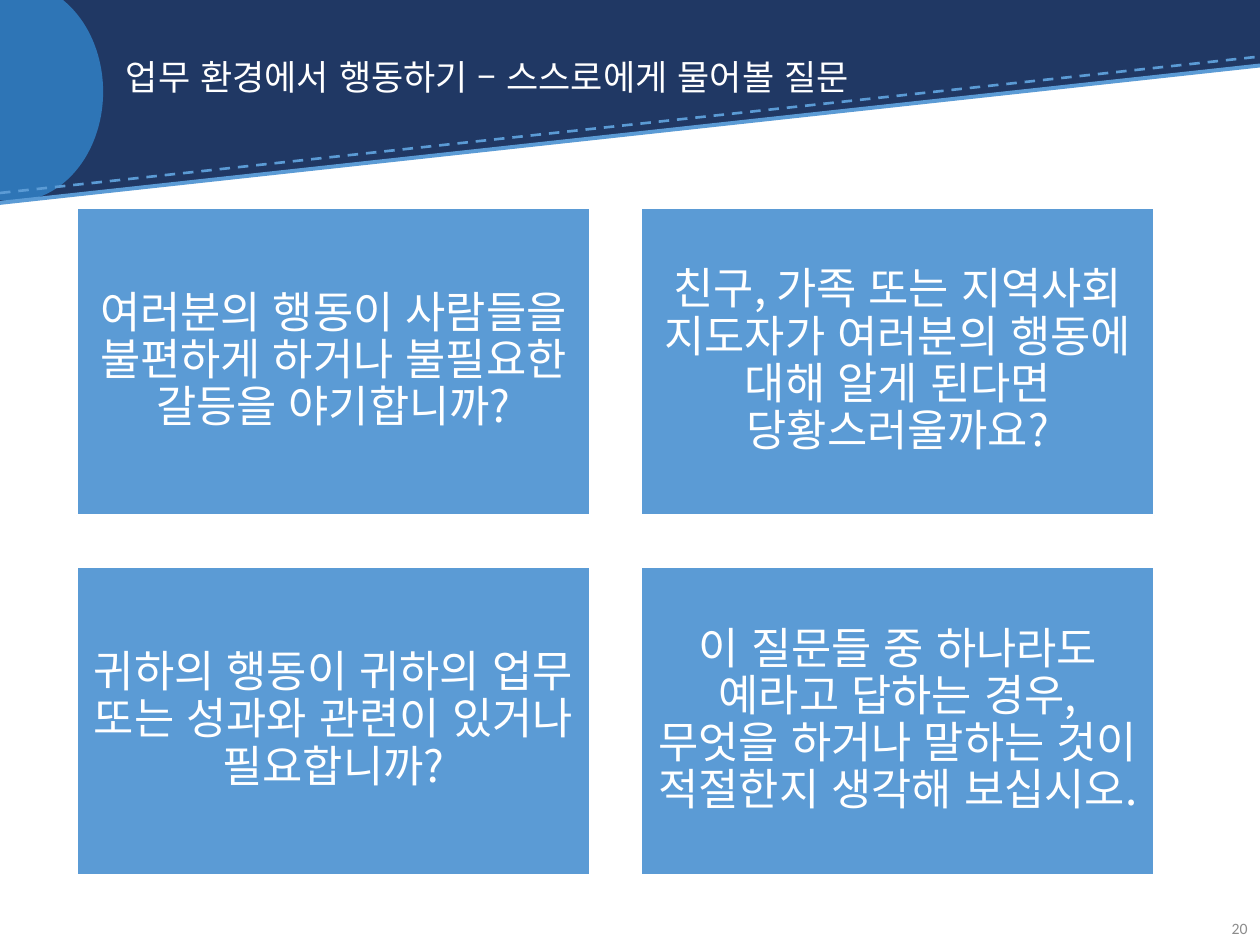
from lxml.etree import SubElement
from pptx import Presentation
from pptx.dml.color import RGBColor
from pptx.enum.dml import MSO_LINE
from pptx.enum.lang import MSO_LANGUAGE_ID
from pptx.enum.shapes import MSO_CONNECTOR, MSO_SHAPE
from pptx.enum.text import MSO_ANCHOR, PP_ALIGN
from pptx.oxml.ns import qn
from pptx.util import Cm, Pt

# Content
TITLE = "업무 환경에서 행동하기 – 스스로에게 물어볼 질문"
QUESTIONS = [
    "여러분의 행동이 사람들을 불편하게 하거나 불필요한 갈등을 야기합니까?",
    "친구, 가족 또는 지역사회 지도자가 여러분의 행동에 대해 알게 된다면 당황스러울까요?",
    "귀하의 행동이 귀하의 업무 또는 성과와 관련이 있거나 필요합니까?",
    "이 질문들 중 하나라도 예라고 답하는 경우, 무엇을 하거나 말하는 것이 적절한지 생각해 보십시오.",
]
PAGE_NUMBER = "20"

# Style
COLORS = {"navy": "203864", "blue": "2E75B6", "sky": "5B9BD5",
          "white": "FFFFFF", "gray": "8C8C8C"}
KOREAN, LATIN = "Noto Sans CJK KR", "Calibri"

# Layout in centimetres
WIDTH, HEIGHT = 25.4, 19.05
BAND_HEIGHT = 1.31
CARD_LEFT, CARD_TOP = 1.55, 4.19
CARD_WIDTH, CARD_HEIGHT, CARD_GAP = 10.34, 6.2, 1.04
COLUMNS = 2


def color(name):
    return RGBColor.from_string(COLORS[name])


def add_block(page, kind, place, fill, outline=None):
    block = page.shapes.add_shape(kind, *map(Cm, place))
    block.shadow.inherit = False
    block.fill.solid()
    block.fill.fore_color.rgb = color(fill)
    if outline:
        block.line.color.rgb = color(outline)
        block.line.width = Pt(1)
    else:
        block.line.fill.background()
    return block


def add_stripe(page, start, end, width, dash=None):
    stripe = page.shapes.add_connector(
        MSO_CONNECTOR.STRAIGHT, *map(Cm, (*start, *end)))
    stripe.line.color.rgb = color("sky")
    stripe.line.width = Pt(width)
    if dash:
        stripe.line.dash_style = dash
    SubElement(stripe._element.spPr, qn("a:effectLst"))


def write(box, text, size, font, ink, align, spacing=1.0):
    frame = box.text_frame
    frame.word_wrap = True
    frame.vertical_anchor = MSO_ANCHOR.MIDDLE
    para = frame.paragraphs[0]
    para.alignment = align
    para.line_spacing = spacing
    span = para.add_run()
    span.text = text
    span.font.size = Pt(size)
    span.font.name = font
    span.font.color.rgb = color(ink)
    if font == KOREAN:
        span.font.language_id = MSO_LANGUAGE_ID.KOREAN
        SubElement(span.font._element, qn("a:ea"), typeface=font)
    return frame


def add_header(page):
    add_block(page, MSO_SHAPE.RECTANGLE, (0, 0, WIDTH, BAND_HEIGHT), "navy")
    slope = add_block(page, MSO_SHAPE.RIGHT_TRIANGLE,
                      (0, 1.3, WIDTH, 2.77), "navy")
    slope._element.spPr.xfrm.set("flipV", "1")
    add_block(page, MSO_SHAPE.OVAL, (-1.5, -0.36, 3.58, 4.42), "blue")
    add_stripe(page, (0, 3.89), (WIDTH, 1.14), 1.5, MSO_LINE.DASH)
    add_stripe(page, (0, 4.09), (WIDTH, 1.32), 2.25)
    title = page.shapes.add_textbox(*map(Cm, (2.29, 0.51, 20.45, 2.18)))
    write(title, TITLE, 20, KOREAN, "white", PP_ALIGN.LEFT, 0.9)


def add_cards(page):
    for index, question in enumerate(QUESTIONS):
        row, column = divmod(index, COLUMNS)
        left = CARD_LEFT + column * (CARD_WIDTH + CARD_GAP)
        top = CARD_TOP + row * (CARD_HEIGHT + CARD_GAP)
        card = add_block(page, MSO_SHAPE.RECTANGLE,
                         (left, top, CARD_WIDTH, CARD_HEIGHT), "sky", "white")
        frame = write(card, question, 25, KOREAN, "white", PP_ALIGN.CENTER, 0.9)
        frame.margin_left = frame.margin_right = Cm(0.25)
        frame.margin_top = frame.margin_bottom = Cm(0.25)


def main():
    deck = Presentation()
    deck.slide_width, deck.slide_height = Cm(WIDTH), Cm(HEIGHT)
    page = deck.slides.add_slide(deck.slide_layouts[6])
    add_header(page)
    add_cards(page)
    # Page number
    number = page.shapes.add_textbox(*map(Cm, (24.05, 18.21, 1.35, 1.02)))
    write(number, PAGE_NUMBER, 9, LATIN, "gray", PP_ALIGN.RIGHT)
    deck.save("out.pptx")


if __name__ == "__main__":
    main()
